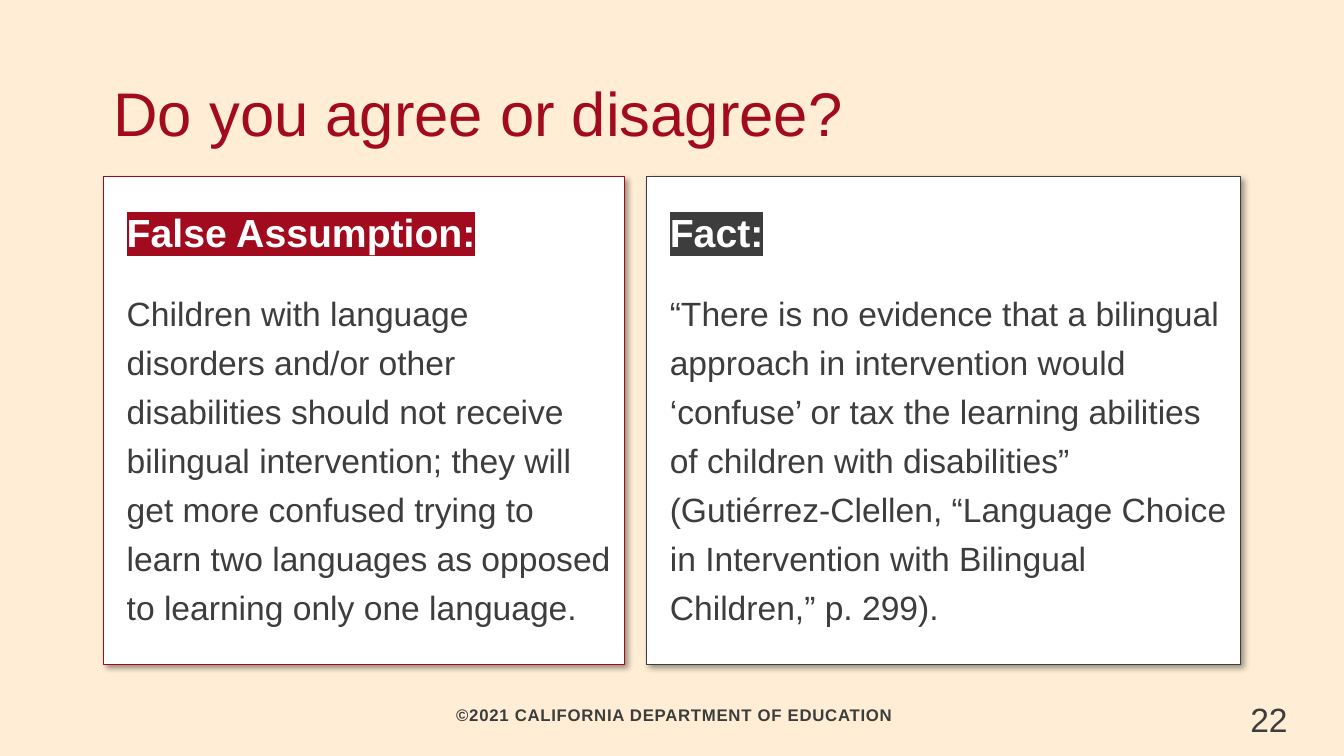
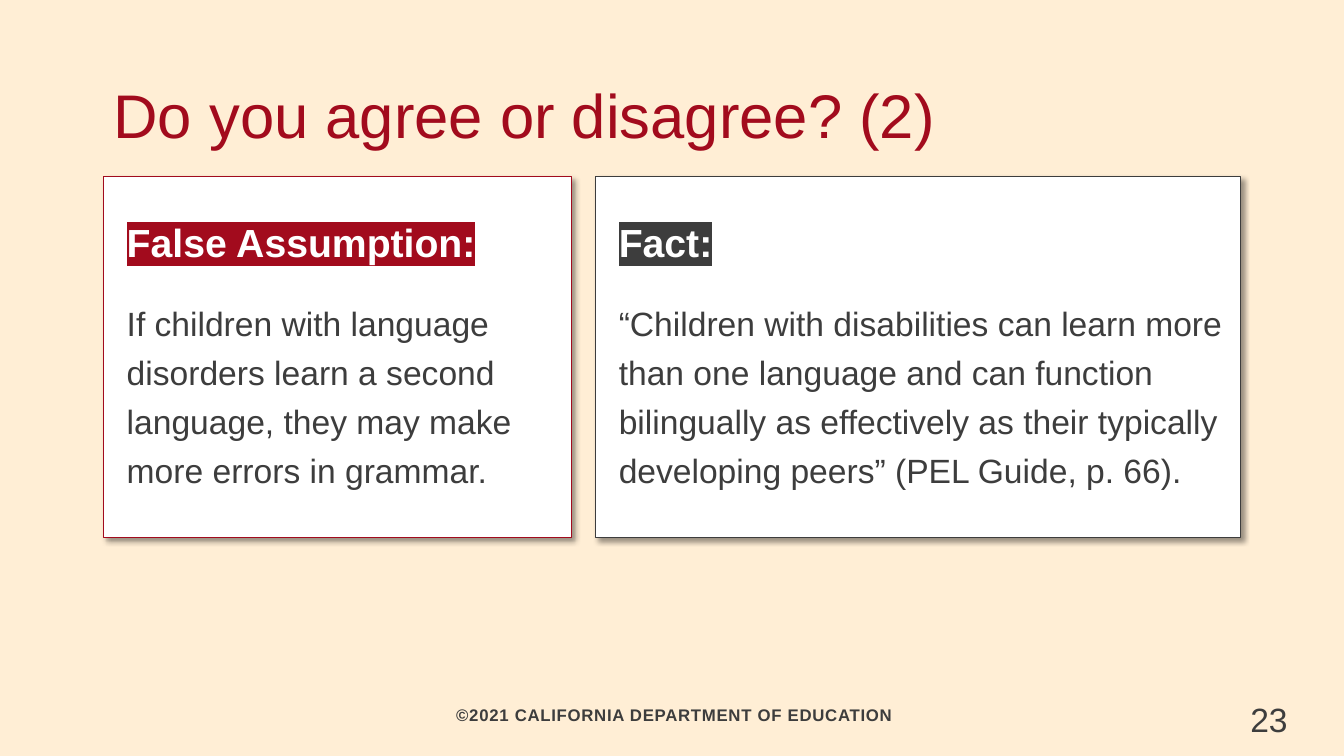
from lxml import etree
from pptx import Presentation
from pptx.dml.color import RGBColor
from pptx.enum.shapes import MSO_SHAPE
from pptx.enum.text import MSO_ANCHOR, PP_ALIGN
from pptx.oxml.ns import qn
from pptx.util import Pt

RECTANGLE = MSO_SHAPE.RECTANGLE
TOP, MIDDLE, BOTTOM = MSO_ANCHOR.TOP, MSO_ANCHOR.MIDDLE, MSO_ANCHOR.BOTTOM
LEFT, CENTER = PP_ALIGN.LEFT, PP_ALIGN.CENTER

COLORS = {
    "background": "FFEED5",
    "red": "A20B1D",
    "dark": "3D3D3D",
    "white": "FFFFFF",
    "shadow": "000000",
}
FONT = "Arial"
CARD_LEFT, CARD_RIGHT, CARD_TOP = 74, 886, 126
FOOTER = "©2021 CALIFORNIA DEPARTMENT OF EDUCATION"

SLIDES = [
    {
        "number": 22,
        "title": "Do you agree or disagree?",
        "title_top": 20,
        "false_width": 372,
        "fact_left": 462,
        "card_height": 349,
        "false": "Children with language disorders and/or other disabilities should not "
                 "receive bilingual intervention; they will get more confused trying to "
                 "learn two languages as opposed to learning only one language.",
        "fact": "“There is no evidence that a bilingual approach in intervention would "
                "‘confuse’ or tax the learning abilities of children with disabilities” "
                "(Gutiérrez-Clellen, “Language Choice in Intervention with Bilingual "
                "Children,” p. 299).",
    },
    {
        "number": 23,
        "title": "Do you agree or disagree? (2)",
        "title_top": 21.6,
        "false_width": 334,
        "fact_left": 425.5,
        "card_height": 258,
        "false": "If children with language disorders learn a second language, they may "
                 "make more errors in grammar.",
        "fact": "“Children with disabilities can learn more than one language and can "
                "function bilingually as effectively as their typically developing "
                "peers” (PEL Guide, p. 66).",
    },
]


def rgb(name):
    return RGBColor.from_string(COLORS[name])


def style_run(r, size, color, bold=False):
    r.font.name = FONT
    r.font.size = Pt(size)
    r.font.bold = bold
    r.font.color.rgb = rgb(color)


def add_color(parent, name):
    return etree.SubElement(parent, qn("a:srgbClr"), val=COLORS[name])


def highlight(r, color):
    mark = etree.Element(qn("a:highlight"))
    add_color(mark, color)
    r.font._element.find(qn("a:solidFill")).addnext(mark)


def indent(p, points):
    p._p.get_or_add_pPr().set("marL", str(Pt(points)))


def add_shadow(sp):
    sp.shadow.inherit = False
    effects = sp._element.spPr.find(qn("a:effectLst"))
    outer = etree.SubElement(effects, qn("a:outerShdw"), blurRad=str(Pt(4)),
                             dist=str(Pt(3)), dir=str(45 * 60000),
                             algn="tl", rotWithShape="0")
    etree.SubElement(add_color(outer, "shadow"), qn("a:alpha"), val="40000")


def add_label(slide, box, text, size, color, anchor=TOP, align=LEFT, bold=False):
    """Add a one-line text box and return its paragraph."""
    tf = slide.shapes.add_textbox(*map(Pt, box)).text_frame
    tf.word_wrap = True
    tf.vertical_anchor = anchor
    p = tf.paragraphs[0]
    p.text = text
    p.alignment = align
    style_run(p.runs[0], size, color, bold)
    return p


def add_title(slide, text, top):
    p = add_label(slide, (CARD_LEFT, top, 864, 90), text, 44, "red", BOTTOM)
    p.line_spacing = 0.85


def add_footer(slide, number):
    box = (CARD_LEFT, 501, CARD_RIGHT - CARD_LEFT, 21)
    p = add_label(slide, box, FOOTER, 12, "dark", MIDDLE, CENTER, bold=True)
    p.line_spacing = 0.95
    indent(p, 3.6)
    p.runs[0].font._element.set("spc", "50")
    add_label(slide, (CARD_RIGHT, 496, 74, 34), str(number), 24, "dark")


def add_card(slide, left, width, height, heading, body, accent):
    box = (left, CARD_TOP, width, height)
    sp = slide.shapes.add_shape(RECTANGLE, *map(Pt, box))
    sp.fill.solid()
    sp.fill.fore_color.rgb = rgb("white")
    sp.line.color.rgb = rgb(accent)
    sp.line.width = Pt(0.75)
    add_shadow(sp)

    tf = sp.text_frame
    tf.word_wrap = True
    tf.vertical_anchor = MIDDLE
    tf.text = f"{heading}\n{body}"
    for p in tf.paragraphs:
        p.alignment = LEFT
        indent(p, 9.4)
    head, detail = tf.paragraphs
    head.line_spacing = 0.9
    head.space_after = Pt(5)
    style_run(head.runs[0], 28, "white", bold=True)
    highlight(head.runs[0], accent)
    detail.line_spacing = Pt(35)
    detail.space_before = Pt(15)
    style_run(detail.runs[0], 24, "dark")


def add_comparison_slide(prs, content):
    slide = prs.slides.add_slide(prs.slide_layouts[6])
    add_footer(slide, content["number"])
    add_title(slide, content["title"], content["title_top"])
    height, fact_left = content["card_height"], content["fact_left"]
    add_card(slide, CARD_LEFT, content["false_width"], height,
             "False Assumption:", content["false"], "red")
    add_card(slide, fact_left, CARD_RIGHT - fact_left, height,
             "Fact:", content["fact"], "dark")


def main():
    prs = Presentation()
    prs.slide_width, prs.slide_height = Pt(960), Pt(540)
    fill = prs.slide_master.background.fill
    fill.solid()
    fill.fore_color.rgb = rgb("background")
    for content in SLIDES:
        add_comparison_slide(prs, content)
    prs.save("out.pptx")


if __name__ == "__main__":
    main()
